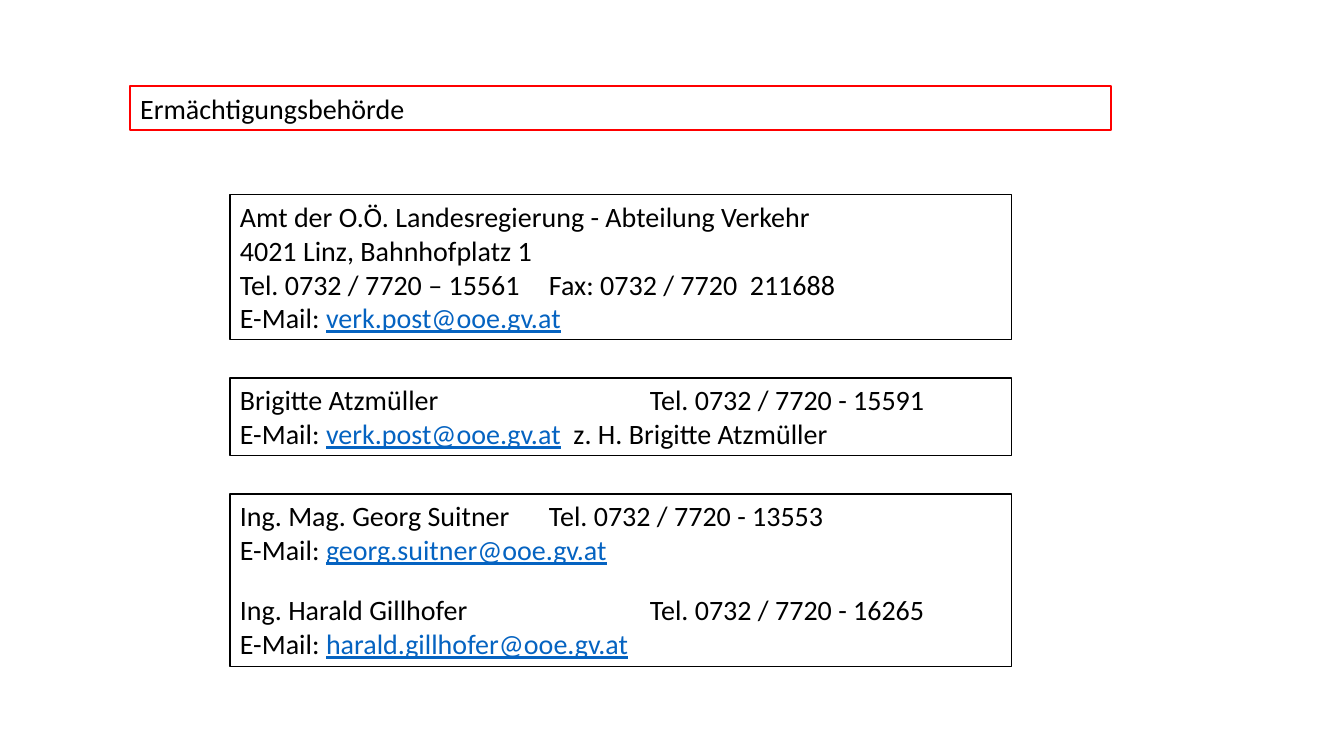
from lxml.etree import SubElement
from pptx import Presentation
from pptx.dml.color import RGBColor
from pptx.enum.text import MSO_ANCHOR, MSO_AUTO_SIZE, PP_ALIGN
from pptx.oxml.ns import qn
from pptx.util import Pt

PX = 9144000 / 1008
BLACK = RGBColor(0x00, 0x00, 0x00)
RED = RGBColor(0xFF, 0x00, 0x00)
LINK_BLUE = RGBColor(0x05, 0x63, 0xC1)
NEAR_TAB, FAR_TAB = 309, 410
CONTACT_LEFT, CONTACT_WIDTH = 230, 782


def px(length):
    return round(length * PX)


def frame(box, left, top, width, height, color, weight):
    box.left, box.top, box.width, box.height = map(px, (left, top, width, height))
    box.line.color.rgb = color
    box.line.width = Pt(weight)
    body = box.text_frame
    body.word_wrap = True
    body.auto_size = MSO_AUTO_SIZE.NONE
    body.vertical_anchor = MSO_ANCHOR.TOP
    return body


presentation = Presentation()
presentation.slide_width = px(1344)
presentation.slide_height = px(756)
slide = presentation.slides.add_slide(presentation.slide_layouts[5])

heading = frame(slide.shapes.title, 130, 86, 981, 44, RED, 1.5).paragraphs[0]
heading.text = "Ermächtigungsbehörde"
heading.alignment = PP_ALIGN.LEFT
heading.font.name = "Calibri"
heading.font.size = Pt(20)
heading.font.color.rgb = BLACK

# Each line: text, e-mail address, text after it, tab stop, space before
contacts = [
    (195, 145, [
        ("Amt der O.Ö. Landesregierung - Abteilung Verkehr", "", "", 0, 0),
        ("4021 Linz, Bahnhofplatz 1", "", "", 0, 0),
        ("Tel. 0732 / 7720 – 15561\tFax: 0732 / 7720  211688", "", "", NEAR_TAB, 0),
        ("E-Mail: ", "verk.post@ooe.gv.at", "", 0, 0),
    ]),
    (378, 78, [
        ("Brigitte Atzmüller\tTel. 0732 / 7720 - 15591", "", "", FAR_TAB, 0),
        ("E-Mail: ", "verk.post@ooe.gv.at", "  z. H. Brigitte Atzmüller", 0, 0),
    ]),
    (494, 173, [
        ("Ing. Mag. Georg Suitner\tTel. 0732 / 7720 - 13553", "", "", NEAR_TAB, 0),
        ("E-Mail: ", "georg.suitner@ooe.gv.at", "", 0, 0),
        ("Ing. Harald Gillhofer\tTel. 0732 / 7720 - 16265", "", "", FAR_TAB, 19),
        ("E-Mail: ", "harald.gillhofer@ooe.gv.at", "", 0, 0),
    ]),
]

for top, height, lines in contacts:
    contact = frame(slide.shapes.add_textbox(0, 0, 0, 0),
                    CONTACT_LEFT, top, CONTACT_WIDTH, height, BLACK, 0.75)
    for index, (text, email, suffix, tab, space) in enumerate(lines):
        line = contact.add_paragraph() if index else contact.paragraphs[0]
        if space:
            line.space_before = Pt(space)
        if tab:
            tabs = SubElement(line._p.get_or_add_pPr(), qn("a:tabLst"))
            SubElement(tabs, qn("a:tab"), pos=str(px(tab)), algn="l")
        line.font.name = "Calibri"
        line.font.size = Pt(20)
        for part in filter(None, (text, email, suffix)):
            run = line.add_run()
            run.text = part
            run.font.color.rgb = LINK_BLUE if part == email else BLACK
            if part == email:
                run.font.underline = True

presentation.save("out.pptx")
